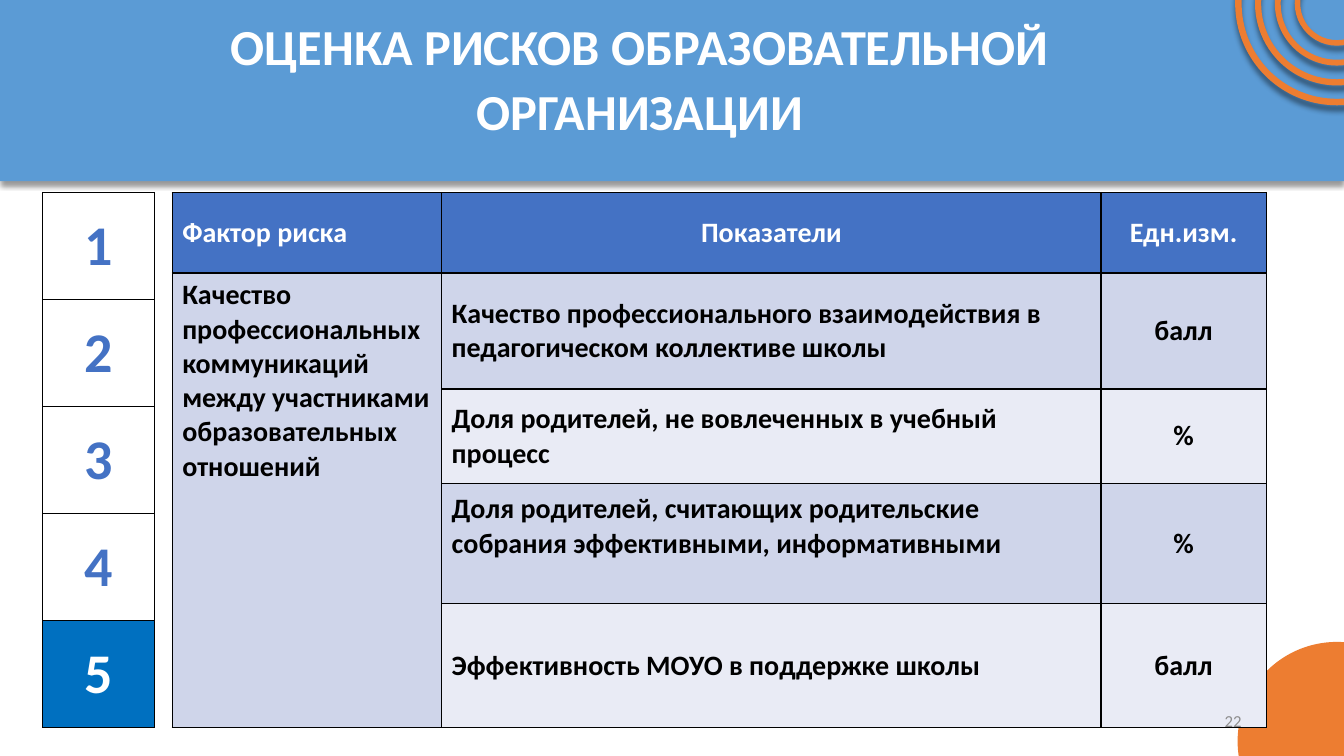
from lxml.etree import SubElement
from pptx import Presentation
from pptx.dml.color import RGBColor
from pptx.enum.shapes import MSO_SHAPE as SHAPE
from pptx.enum.text import MSO_ANCHOR as ANCHOR, PP_ALIGN as ALIGN
from pptx.oxml.ns import qn
from pptx.util import Pt

WHITE = RGBColor(0xFF, 0xFF, 0xFF)
BLACK = RGBColor(0, 0, 0)
GRAY = RGBColor(0x8C, 0x8C, 0x8C)
SKY = RGBColor(0x5B, 0x9B, 0xD5)
ORANGE = RGBColor(0xED, 0x7D, 0x31)
BLUE = RGBColor(0x44, 0x72, 0xC4)
ACTIVE = RGBColor(0x00, 0x70, 0xC0)
BANDS = [RGBColor(0xCF, 0xD5, 0xEA), RGBColor(0xE9, 0xEB, 0xF5)]

TITLE = "ОЦЕНКА РИСКОВ ОБРАЗОВАТЕЛЬНОЙ ОРГАНИЗАЦИИ"
HEADER = ["Фактор риска", "Показатели", "Едн.изм."]
FACTOR = "Качество профессиональных коммуникаций между участниками образовательных отношений"
INDICATORS = [
    ("Качество профессионального взаимодействия в педагогическом коллективе школы", "балл"),
    ("Доля родителей, не вовлеченных в учебный процесс", "%"),
    ("Доля родителей, считающих родительские собрания эффективными, информативными", "%"),
    ("Эффективность МОУО в поддержке школы", "балл"),
]
STEPS = ["1", "2", "3", "4", "5"]
PAGE = "22"

WIDTH, HEIGHT = 960, 540
TABLE_TOP = 137.5
RISK_COLS = [192.5, 471, 118]
RISK_ROWS = [57.5, 82.8, 67.8, 85.7, 88.6]
STEP_W, STEP_H = 80, 76.5
CORNER_X, RINGS_Y, DISC_Y = 955, 2.5, 529.5
DISC_D, RING_STEP, RING_COUNT = 142, 28.4, 4


def write(tf, text, size=20, color=BLACK, bold=True, align=ALIGN.LEFT):
    tf.word_wrap = True
    p = tf.paragraphs[0]
    p.alignment = align
    r = p.add_run()
    r.text = text
    r.font.name, r.font.size, r.font.bold = "Calibri", Pt(size), bold
    r.font.color.rgb = color
    return p


def add_shadow(sp, alpha, blur, dist):
    effects = sp._element.spPr.find(qn("a:effectLst"))
    outer = SubElement(effects, qn("a:outerShdw"), blurRad=str(Pt(blur)),
                       dist=str(Pt(dist)), dir="5400000", rotWithShape="0")
    black = SubElement(outer, qn("a:srgbClr"), val="000000")
    SubElement(black, qn("a:alpha"), val=str(alpha * 1000))


def add_solid(s, kind, x, y, w, h, color):
    sp = s.shapes.add_shape(kind, Pt(x), Pt(y), Pt(w), Pt(h))
    sp.shadow.inherit = False
    sp.fill.solid()
    sp.fill.fore_color.rgb = color
    sp.line.fill.background()
    return sp


def add_round(s, kind, cy, d):
    return add_solid(s, kind, CORNER_X - d / 2, cy - d / 2, d, d, ORANGE)


def add_text(s, x, y, w, h, text, **fmt):
    tf = s.shapes.add_textbox(Pt(x), Pt(y), Pt(w), Pt(h)).text_frame
    tf.vertical_anchor = ANCHOR.MIDDLE
    return write(tf, text, **fmt)


def add_grid(s, x, cols, rows):
    """Add a table with black borders on every cell."""
    table = s.shapes.add_table(len(rows), len(cols), Pt(x), Pt(TABLE_TOP),
                               Pt(sum(cols)), Pt(sum(rows))).table
    for col, w in zip(table.columns, cols):
        col.width = Pt(w)
    for row, h in zip(table.rows, rows):
        row.height = Pt(h)
    for cell in table.iter_cells():
        tcPr = cell._tc.get_or_add_tcPr()
        for side in ("lnL", "lnR", "lnT", "lnB"):
            ln = SubElement(tcPr, qn(f"a:{side}"), w=str(Pt(1)))
            fill = SubElement(ln, qn("a:solidFill"))
            SubElement(fill, qn("a:srgbClr"), val=str(BLACK))
    return table


def set_cell(cell, text, fill, anchor=ANCHOR.MIDDLE, **fmt):
    cell.fill.solid()
    cell.fill.fore_color.rgb = fill
    cell.vertical_anchor = anchor
    write(cell.text_frame, text, **fmt)


def add_backdrop(s):
    band = add_solid(s, SHAPE.RECTANGLE, 0, 0, WIDTH, 129.5, SKY)
    add_shadow(band, 40, 4, 3)
    add_round(s, SHAPE.OVAL, DISC_Y, DISC_D)
    for i in range(RING_COUNT):
        ring = add_round(s, SHAPE.DONUT, RINGS_Y, DISC_D - i * RING_STEP)
        ring.adjustments[0] = 0.008
        ring.line.color.rgb = ORANGE
        ring.line.width = Pt(3.5)
        add_shadow(ring, 43, 4, 4)


def add_risks(s):
    table = add_grid(s, 123, RISK_COLS, RISK_ROWS)
    for c, text in enumerate(HEADER):
        set_cell(table.cell(0, c), text, BLUE, color=WHITE,
                 align=ALIGN.CENTER if c else ALIGN.LEFT)
    factor = table.cell(1, 0)
    factor.merge(table.cell(len(INDICATORS), 0))
    set_cell(factor, FACTOR, BANDS[0], anchor=ANCHOR.TOP)
    for i, (indicator, unit) in enumerate(INDICATORS):
        fill = BANDS[i % 2]
        set_cell(table.cell(i + 1, 1), indicator, fill)
        set_cell(table.cell(i + 1, 2), unit, fill, align=ALIGN.CENTER)
    # The third indicator sits near the top of its row
    raised = table.cell(3, 1)
    raised.vertical_anchor = ANCHOR.TOP
    raised.margin_top = Pt(6)


def add_steps(s):
    table = add_grid(s, 30.5, [STEP_W], [STEP_H] * len(STEPS))
    for i, step in enumerate(STEPS):
        current = step == STEPS[-1]
        set_cell(table.cell(i, 0), step, ACTIVE if current else WHITE, size=40,
                 color=WHITE if current else BLUE, align=ALIGN.CENTER)


def main():
    prs = Presentation()
    prs.slide_width, prs.slide_height = Pt(WIDTH), Pt(HEIGHT)
    s = prs.slides.add_slide(prs.slide_layouts[6])
    add_backdrop(s)
    title = add_text(s, 43, 10, 828, 88, TITLE, size=36, color=WHITE, align=ALIGN.CENTER)
    title.line_spacing = 1.07
    title.space_after = Pt(8)
    add_risks(s)
    add_steps(s)
    add_text(s, 678, 500.5, 216, 29, PAGE, size=12, color=GRAY, bold=False, align=ALIGN.RIGHT)
    prs.save("out.pptx")


if __name__ == "__main__":
    main()
